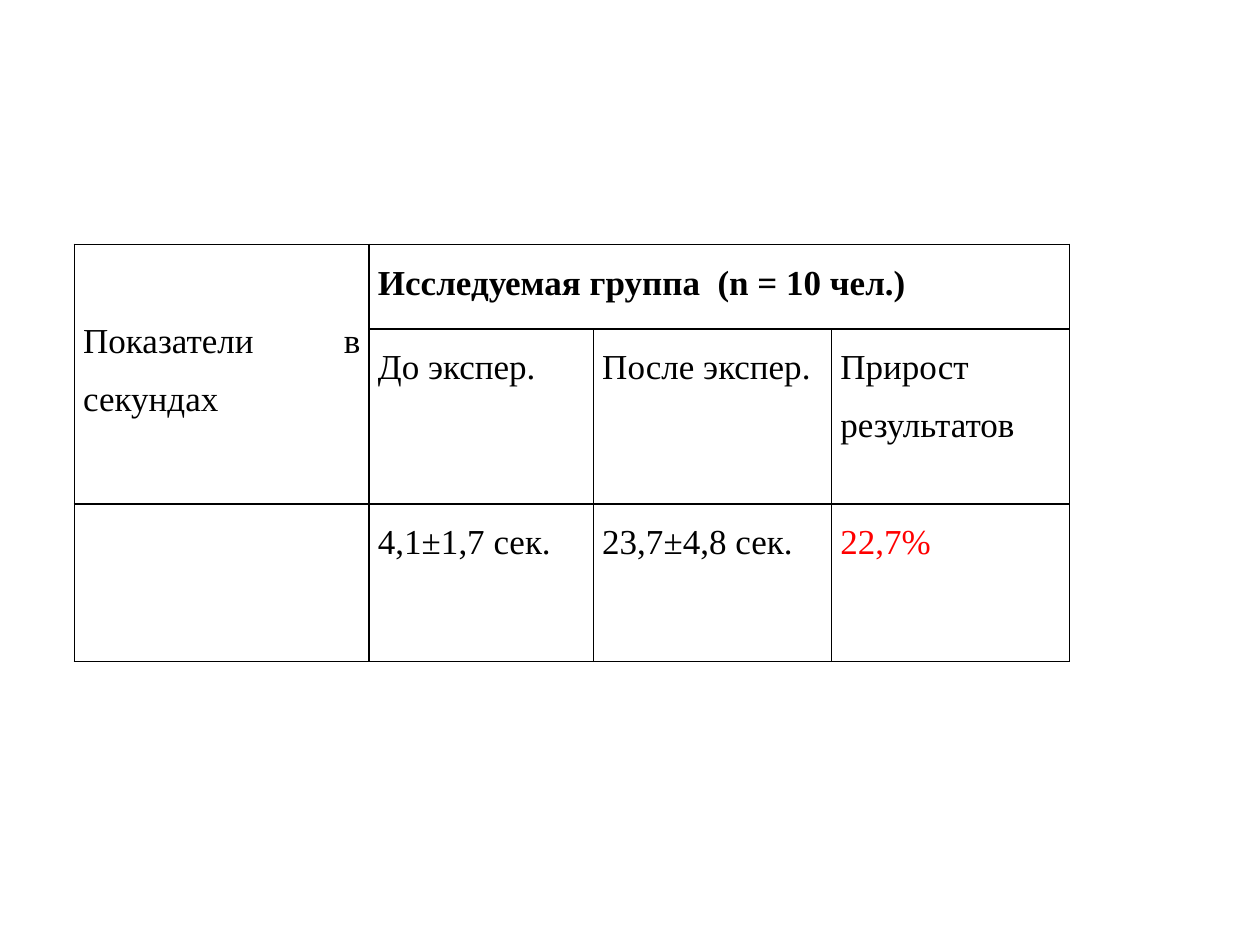
from lxml import etree
from pptx import Presentation
from pptx.dml.color import RGBColor
from pptx.enum.text import PP_ALIGN
from pptx.oxml.ns import qn
from pptx.util import Inches, Pt

JUSTIFY = PP_ALIGN.JUSTIFY
FONT = "Times New Roman"
BLACK = "000000"
RED = "FF0000"
COLUMN_WIDTHS = [2.34, 1.78, 1.89, 1.89]
ROW_HEIGHTS = [0.67, 1.39, 1.25]
ROWS = [
    ["Показатели в секундах", "Исследуемая группа  (n = 10 чел.)", "", ""],
    ["", "До экспер.", "После экспер.", "Прирост результатов"],
    ["", "4,1±1,7 сек.", "23,7±4,8 сек.", "22,7%"],
]


def color(value):
    """Return the colour for a hex string."""
    return RGBColor.from_string(value)


def add_borders(cell):
    """Draw a thin black line on every side of a cell."""
    properties = cell._tc.get_or_add_tcPr()
    for side in ("a:lnL", "a:lnR", "a:lnT", "a:lnB"):
        line = etree.SubElement(properties, qn(side), w=str(Pt(1)))
        fill = etree.SubElement(line, qn("a:solidFill"))
        etree.SubElement(fill, qn("a:srgbClr"), val=BLACK)


def style_cell(cell, text, text_color=BLACK, bold=False):
    """Give a cell its border, insets and justified text."""
    add_borders(cell)
    cell.fill.background()
    cell.margin_left = cell.margin_right = Inches(0.07)
    cell.margin_top = cell.margin_bottom = 0
    if not text:
        return
    cell.text_frame.text = text
    para = cell.text_frame.paragraphs[0]
    para.alignment = JUSTIFY
    para.line_spacing = 1.5
    for span in para.runs:
        span.font.name = FONT
        span.font.size = Pt(20)
        span.font.bold = bold
        span.font.color.rgb = color(text_color)


def add_results_table(page, left, top, width, height):
    """Place the table of results before and after the experiment."""
    frame = page.shapes.add_table(
        len(ROWS), len(COLUMN_WIDTHS), Inches(left), Inches(top), Inches(width), Inches(height)
    )
    table = frame.table
    table.first_row = False
    table.horz_banding = False
    for column, size in zip(table.columns, COLUMN_WIDTHS):
        column.width = Inches(size)
    for row, size in zip(table.rows, ROW_HEIGHTS):
        row.height = Inches(size)
    for row_index, texts in enumerate(ROWS):
        for column_index, text in enumerate(texts):
            text_color = RED if text.endswith("%") else BLACK
            bold = (row_index, column_index) == (0, 1)
            style_cell(table.cell(row_index, column_index), text, text_color, bold)
    indicator = table.cell(0, 0)
    indicator.margin_top = Inches(0.46)
    indicator.merge(table.cell(1, 0))
    table.cell(0, 1).merge(table.cell(0, 3))


def main():
    """Build the deck and save it."""
    deck = Presentation()
    deck.slide_width = Inches(10)
    deck.slide_height = Inches(7.5)
    page = deck.slides.add_slide(deck.slide_layouts[6])
    add_results_table(page, 0.59, 1.94, sum(COLUMN_WIDTHS), sum(ROW_HEIGHTS))
    deck.save("out.pptx")


if __name__ == "__main__":
    main()
